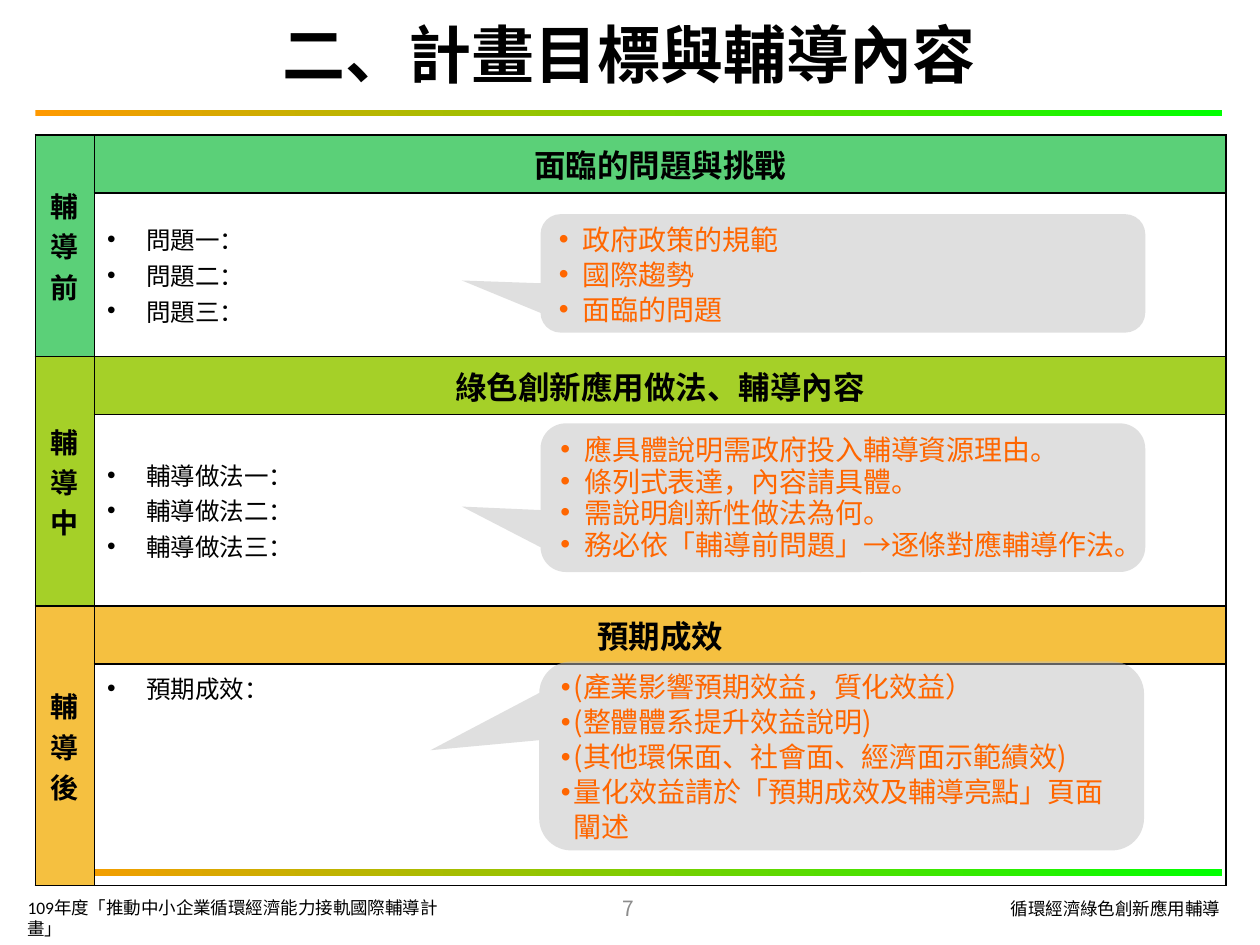
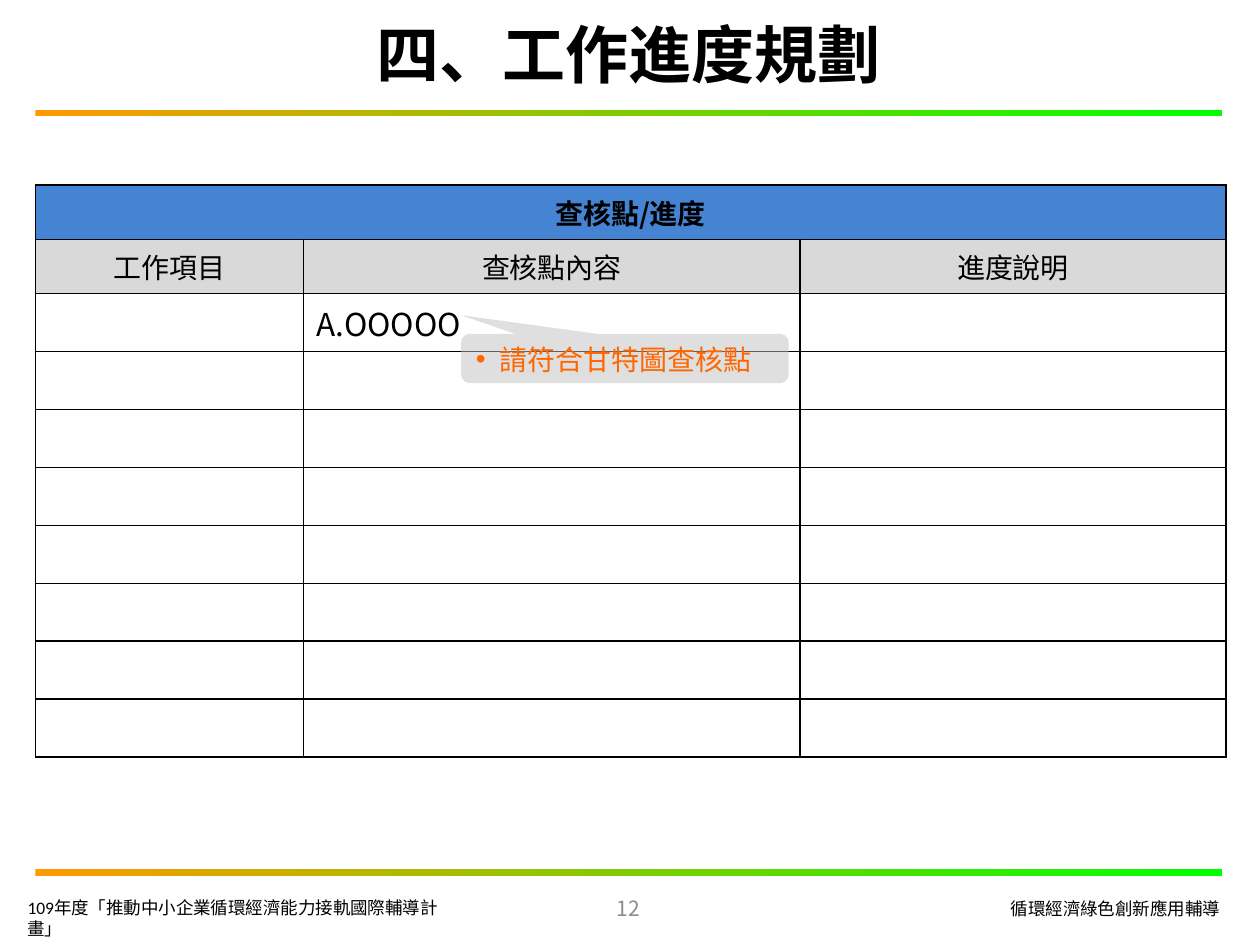
import pptx
import pptx.util
import pptx.dml.color
import pptx.enum.shapes
import pptx.enum.text
import pptx.oxml
import pptx.oxml.ns
import lxml.etree

PX = 9144  # 100 px to the inch
SANS, LATIN = "Noto Sans CJK SC", "Calibri"
BLACK, GRAY, ORANGE, SILVER = "000000", "8C8C8C", "FF6600", "C0C0C0"
START, END = "FF9900", "00FF00"
GREEN, LIME, GOLD = "5BD078", "A5D028", "F5C040"
BLUE, PALE = "4584D3", "D9D9D9"

ALIGN = pptx.enum.text.PP_ALIGN
ANCHOR = pptx.enum.text.MSO_ANCHOR
SHAPE = pptx.enum.shapes.MSO_SHAPE
qn = pptx.oxml.ns.qn


def px(*nums):
    return [pptx.util.Emu(n * PX) for n in nums]


def rgb(code):
    return pptx.dml.color.RGBColor.from_string(code)


def add_bullet(para, indent):
    props = para._p.get_or_add_pPr()
    props.set("marL", str(indent * PX))
    props.set("indent", str(-indent * PX))
    lxml.etree.SubElement(props, qn("a:buFont")).set("typeface", "Arial")
    lxml.etree.SubElement(props, qn("a:buChar")).set("char", "•")


def write(frame, lines, size, hue=BLACK, bold=False, align=ALIGN.LEFT,
          face=SANS, indent=0, pitch=None):
    """Fill a text frame with one paragraph for each line."""
    frame.word_wrap = True
    for i, line in enumerate(lines):
        para = frame.add_paragraph() if i else frame.paragraphs[0]
        para.text = line
        para.alignment = align
        if indent:
            add_bullet(para, indent)
        if pitch:
            para.line_spacing = pptx.util.Pt(pitch)
        font = para.font
        font.size, font.bold, font.name = pptx.util.Pt(size), bold, face
        font.color.rgb = rgb(hue)
        chars = para._p.pPr.find(qn("a:defRPr"))
        lxml.etree.SubElement(chars, qn("a:ea")).set("typeface", SANS)


def add_band(slide, box):
    band = slide.shapes.add_shape(SHAPE.RECTANGLE, *px(*box))
    band.shadow.inherit = False
    band.line.fill.background()
    band.fill.gradient()
    band.fill.gradient_angle = 0
    for stop, hue, pos in zip(band.fill.gradient_stops, (START, END), (0, 1)):
        stop.color.rgb = rgb(hue)
        stop.position = pos


def add_label(slide, box, text, size, **style):
    frame = slide.shapes.add_textbox(*px(*box)).text_frame
    write(frame, [text], size, **style)
    return frame


def add_page(deck, title, number):
    """Start a slide with its title, bands and footers."""
    slide = deck.slides.add_slide(deck.slide_layouts[5])
    head = slide.shapes.title
    head.left, head.top, head.width, head.height = px(0, 13, 998, 59)
    write(head.text_frame, [title], 36, bold=True, align=ALIGN.CENTER)
    head.text_frame.vertical_anchor = ANCHOR.MIDDLE
    for top in (87, 690):
        add_band(slide, (28, top, 942, 5))
    add_label(slide, (12, 707, 371, 27),
              "109年度「推動中小企業循環經濟能力接軌國際輔導計畫」", 10, face=LATIN)
    add_label(slide, (736, 708, 242, 27), "循環經濟綠色創新應用輔導", 10,
              face=LATIN, align=ALIGN.RIGHT)
    page = add_label(slide, (382, 701, 233, 40), number, 12, hue=GRAY,
                     align=ALIGN.CENTER)
    page.vertical_anchor = ANCHOR.MIDDLE
    return slide


def add_border(cell):
    props = cell._tc.get_or_add_tcPr()
    for side in ("lnL", "lnR", "lnT", "lnB"):
        line = lxml.etree.SubElement(props, qn("a:" + side), w="12700")
        fill = lxml.etree.SubElement(line, qn("a:solidFill"))
        lxml.etree.SubElement(fill, qn("a:srgbClr")).set("val", BLACK)


def add_grid(slide, spot, cols, rows):
    """Add a table with black borders and no fill."""
    size = (sum(cols), sum(rows))
    table = slide.shapes.add_table(
        len(rows), len(cols), *px(*spot, *size)).table
    table.first_row = table.horz_banding = False
    for col, width in zip(table.columns, px(*cols)):
        col.width = width
    for row, height in zip(table.rows, px(*rows)):
        row.height = height
    for cell in table.iter_cells():
        add_border(cell)
        cell.fill.background()
    return table


def fill_cell(cell, lines, size, hue=None, anchor=ANCHOR.MIDDLE, **style):
    write(cell.text_frame, lines, size, **style)
    cell.vertical_anchor = anchor
    if hue:
        cell.fill.solid()
        cell.fill.fore_color.rgb = rgb(hue)


def add_note(slide, box, tip, lines, indent=19, pitch=20):
    """Add a half-clear callout whose tip is relative to its centre."""
    note = slide.shapes.add_shape(SHAPE.ROUNDED_RECTANGULAR_CALLOUT, *px(*box))
    note.shadow.inherit = False
    note.line.fill.background()
    for i, value in enumerate((*tip, 0.17)):
        note.adjustments[i] = value
    note.fill.solid()
    note.fill.fore_color.rgb = rgb(SILVER)
    color = note._element.spPr.find(qn("a:solidFill"))[0]
    lxml.etree.SubElement(color, qn("a:alpha")).set("val", "50000")
    note.text_frame.vertical_anchor = ANCHOR.MIDDLE
    write(note.text_frame, lines, 16, hue=ORANGE, indent=indent, pitch=pitch)


def add_goals(deck):
    slide = add_page(deck, "二、計畫目標與輔導內容", "7")
    stages = [
        ("輔導前", "面臨的問題與挑戰", GREEN, ANCHOR.MIDDLE,
         ["問題一：", "問題二：", "問題三："]),
        ("輔導中", "綠色創新應用做法、輔導內容", LIME, ANCHOR.MIDDLE,
         ["輔導做法一：", "輔導做法二：", "輔導做法三："]),
        ("輔導後", "預期成效", GOLD, ANCHOR.TOP, ["預期成效："]),
    ]
    table = add_grid(slide, (28, 107), (47, 898), (46, 130, 46, 152, 46, 176))
    for i, (stage, topic, hue, anchor, points) in enumerate(stages):
        top = 2 * i
        side = table.cell(top, 0)
        side.merge(table.cell(top + 1, 0))
        fill_cell(side, [stage], 16, hue, bold=True, align=ALIGN.CENTER)
        fill_cell(table.cell(top, 1), [topic], 18, hue, bold=True,
                  align=ALIGN.CENTER)
        fill_cell(table.cell(top + 1, 1), points, 14, anchor=anchor, indent=31)

    # Hints beside each stage
    add_note(slide, (429, 336, 480, 118), (-0.63, 0.06), [
        "應具體說明需政府投入輔導資源理由。",
        "條列式表達，內容請具體。",
        "需說明創新性做法為何。",
        "務必依「輔導前問題」→逐條對應輔導作法。"], pitch=18)
    add_note(slide, (429, 170, 480, 94), (-0.63, 0.06),
             ["政府政策的規範", "國際趨勢", "面臨的問題"])
    add_note(slide, (428, 525, 480, 150), (-0.68, -0.03), [
        "(產業影響預期效益，質化效益）",
        "(整體體系提升效益說明)",
        "(其他環保面、社會面、經濟面示範績效)",
        "量化效益請於「預期成效及輔導亮點」頁面闡述"], indent=10)


def add_plan(deck):
    slide = add_page(deck, "四、工作進度規劃", "12")
    table = add_grid(slide, (28, 147), (213, 394, 338), [43] * 2 + [46] * 8)
    head = table.cell(0, 0)
    head.merge(table.cell(0, 2))
    fill_cell(head, ["查核點/進度"], 16, BLUE, bold=True, align=ALIGN.CENTER)
    for i, name in enumerate(("工作項目", "查核點內容", "進度說明")):
        fill_cell(table.cell(1, i), [name], 16, PALE, align=ALIGN.CENTER)
    fill_cell(table.cell(2, 1), ["A.OOOOO"], 18, anchor=ANCHOR.TOP)
    add_note(slide, (366, 265, 260, 39), (-0.5, -0.88), ["請符合甘特圖查核點"])


def main():
    deck = pptx.Presentation()
    deck.slide_width, deck.slide_height = px(1000, 750)
    add_goals(deck)
    add_plan(deck)
    deck.save("out.pptx")


if __name__ == "__main__":
    main()
